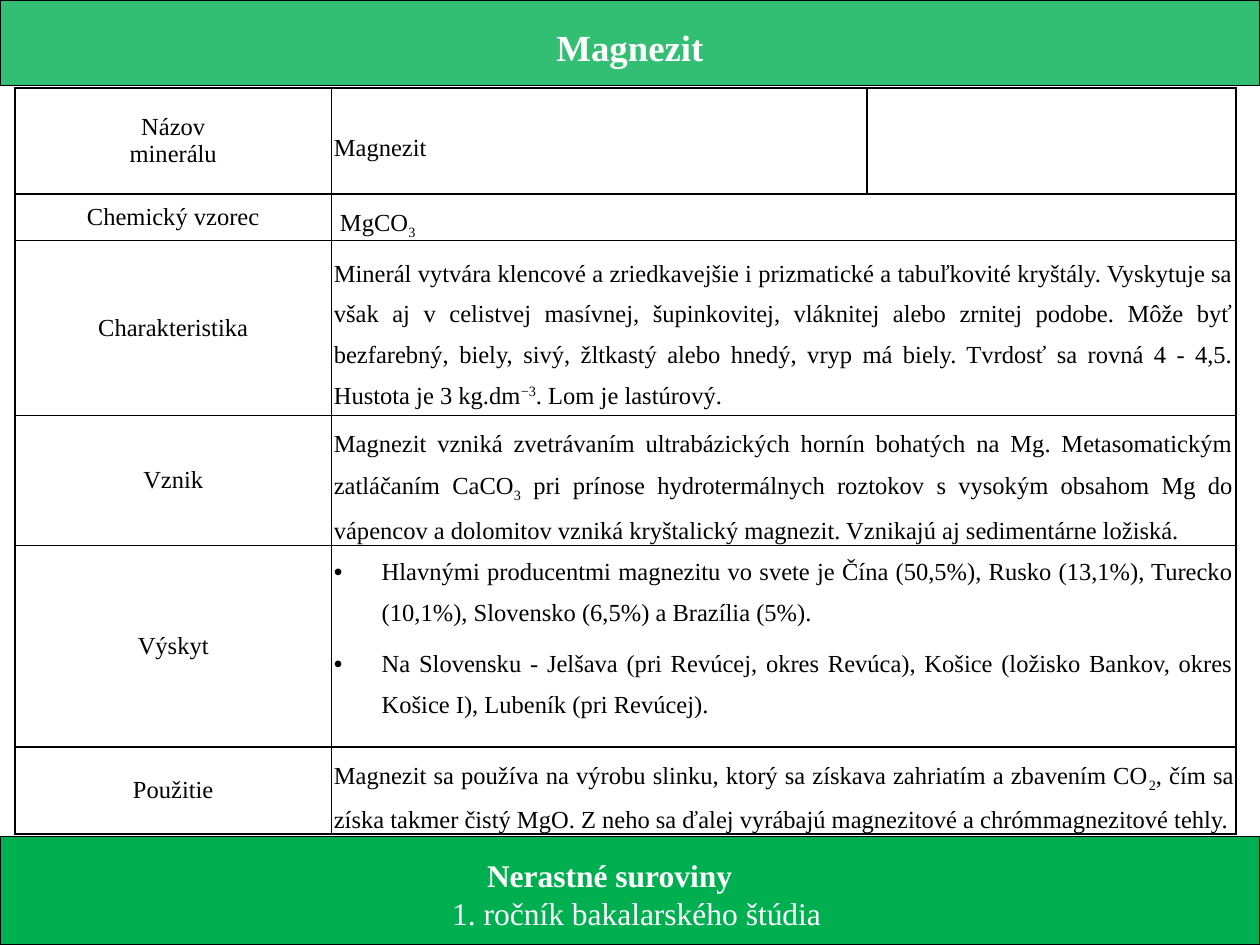
from lxml.etree import SubElement
from pptx import Presentation
from pptx.dml.color import RGBColor
from pptx.enum.shapes import MSO_SHAPE
from pptx.enum.text import MSO_ANCHOR, PP_ALIGN
from pptx.oxml.ns import qn
from pptx.util import Inches, Pt

GREEN = RGBColor(0x00, 0xB0, 0x50)
BLACK = RGBColor(0x00, 0x00, 0x00)
WHITE = RGBColor(0xFF, 0xFF, 0xFF)
FONT = "Times New Roman"

WIDTH, HEIGHT = 10, 7.5
COLUMN_WIDTHS = [2.51, 4.25, 2.93]
ROW_HEIGHTS = [0.84, 0.34, 1.39, 1.03, 1.6, 0.69]
SUBSCRIPT, SUPERSCRIPT = -25000, 30000

# Each row: label lines, then paragraphs made of (text, baseline) runs.
MINERAL_ROWS = [
    (["Názov", "minerálu"], [[("Magnezit", 0)]]),
    (["Chemický vzorec"], [[(" MgCO", 0), ("3", SUBSCRIPT)]]),
    (["Charakteristika"], [[
        ("Minerál vytvára klencové a zriedkavejšie i prizmatické a tabuľkovité kryštály. "
         "Vyskytuje sa však aj v celistvej masívnej, šupinkovitej, vláknitej alebo zrnitej "
         "podobe. Môže byť bezfarebný, biely, sivý, žltkastý alebo hnedý, vryp má biely. "
         "Tvrdosť sa rovná 4 - 4,5. Hustota je 3 kg.dm", 0),
        ("−3", SUPERSCRIPT), (". Lom je lastúrový.", 0)]]),
    (["Vznik"], [[
        ("Magnezit vzniká zvetrávaním ultrabázických hornín bohatých na Mg. "
         "Metasomatickým zatláčaním CaCO", 0),
        ("3", SUBSCRIPT),
        (" pri prínose hydrotermálnych roztokov s vysokým obsahom Mg do vápencov a dolomitov "
         "vzniká kryštalický magnezit. Vznikajú aj sedimentárne ložiská.", 0)]]),
    (["Výskyt"], [
        [("Hlavnými producentmi magnezitu vo svete je Čína (50,5%), Rusko (13,1%), "
          "Turecko (10,1%), Slovensko (6,5%) a Brazília (5%).", 0)],
        [("Na Slovensku - Jelšava (pri Revúcej, okres Revúca), Košice (ložisko Bankov, "
          "okres Košice I), Lubeník (pri Revúcej).", 0)]]),
    (["Použitie"], [[
        ("Magnezit sa používa na výrobu slinku, ktorý sa získava zahriatím a zbavením CO", 0),
        ("2", SUBSCRIPT),
        (", čím sa získa takmer čistý MgO. Z neho sa ďalej vyrábajú magnezitové "
         "a chrómmagnezitové tehly.", 0)]]),
]


def add_run(paragraph, text, size, color, bold=False, baseline=0):
    run = paragraph.add_run()
    run.text = text
    run.font.name = FONT
    run.font.size = Pt(size)
    run.font.color.rgb = color
    run.font.bold = bold
    if baseline:
        run.font._element.set("baseline", str(baseline))


def next_paragraph(text_frame, index):
    return text_frame.add_paragraph() if index else text_frame.paragraphs[0]


def add_band(slide, top, height, lines, top_margin, right_margin=0.1, opacity=100):
    """Draw a full-width green band; lines are (text, size, bold, left indent)."""
    band = slide.shapes.add_shape(
        MSO_SHAPE.RECTANGLE, 0, Inches(top), Inches(WIDTH), Inches(height))
    band.shadow.inherit = False
    band.fill.solid()
    band.fill.fore_color.rgb = GREEN
    if opacity < 100:
        color = band._element.spPr.find(qn("a:solidFill"))[0]
        SubElement(color, qn("a:alpha"), val=str(opacity * 1000))
    band.line.color.rgb = BLACK
    band.line.width = Pt(0.75)
    text_frame = band.text_frame
    text_frame.word_wrap = True
    text_frame.vertical_anchor = MSO_ANCHOR.MIDDLE
    text_frame.margin_top = Inches(top_margin)
    text_frame.margin_right = Inches(right_margin)
    for index, (text, size, bold, indent) in enumerate(lines):
        paragraph = next_paragraph(text_frame, index)
        paragraph.alignment = PP_ALIGN.CENTER
        if indent:
            paragraph._p.get_or_add_pPr().set("marL", str(Inches(indent)))
        add_run(paragraph, text, size, WHITE, bold)


def format_cell(cell):
    properties = cell._tc.get_or_add_tcPr()
    for side in ("lnL", "lnR", "lnT", "lnB"):
        border = SubElement(properties, qn(f"a:{side}"), w=str(Pt(1)))
        fill = SubElement(border, qn("a:solidFill"))
        SubElement(fill, qn("a:srgbClr"), val=str(BLACK))
    cell.fill.background()
    cell.margin_left = cell.margin_right = Inches(0.02)
    cell.margin_top = cell.margin_bottom = 0
    cell.vertical_anchor = MSO_ANCHOR.MIDDLE


def fill_label(cell, lines):
    for index, line in enumerate(lines):
        paragraph = next_paragraph(cell.text_frame, index)
        paragraph.alignment = PP_ALIGN.CENTER
        add_run(paragraph, line, 14, BLACK)


def fill_description(cell, paragraphs, alignment):
    """Write the paragraphs, as a bulleted list when there are several."""
    bulleted = len(paragraphs) > 1
    if bulleted:
        cell.vertical_anchor = MSO_ANCHOR.TOP
    for index, runs in enumerate(paragraphs):
        paragraph = next_paragraph(cell.text_frame, index)
        paragraph.alignment = alignment
        paragraph.line_spacing = 1.5
        paragraph.space_after = Pt(6)
        if bulleted:
            properties = paragraph._p.get_or_add_pPr()
            properties.set("marL", str(Inches(0.38)))
            properties.set("indent", str(Inches(-0.38)))
            SubElement(properties, qn("a:buFont"), typeface="Arial")
            SubElement(properties, qn("a:buChar"), char="•")
        for text, baseline in runs:
            add_run(paragraph, text, 14, BLACK, baseline=baseline)


def add_mineral_table(slide):
    table = slide.shapes.add_table(
        len(ROW_HEIGHTS), len(COLUMN_WIDTHS), Inches(0.12), Inches(0.7),
        Inches(sum(COLUMN_WIDTHS)), Inches(sum(ROW_HEIGHTS))).table
    table.first_row = table.horz_banding = False
    for column, width in zip(table.columns, COLUMN_WIDTHS):
        column.width = Inches(width)
    for row, height in zip(table.rows, ROW_HEIGHTS):
        row.height = Inches(height)
    for cell in table.iter_cells():
        format_cell(cell)
    for index, (label, description) in enumerate(MINERAL_ROWS):
        if index:
            table.cell(index, 1).merge(table.cell(index, 2))
        fill_label(table.cell(index, 0), label)
        alignment = PP_ALIGN.JUSTIFY if index > 1 else PP_ALIGN.LEFT
        fill_description(table.cell(index, 1), description, alignment)


def main():
    presentation = Presentation()
    presentation.slide_width = Inches(WIDTH)
    presentation.slide_height = Inches(HEIGHT)
    slide = presentation.slides.add_slide(presentation.slide_layouts[6])
    add_band(slide, 0, 0.68, [("Magnezit", 21, True, 0)], top_margin=0.11, opacity=80)
    add_band(slide, 6.64, 0.86,
             [("Nerastné suroviny", 18, True, 0),
              ("1. ročník bakalarského štúdia", 18, False, 0.43)],
             top_margin=0.1, right_margin=0.42)
    add_mineral_table(slide)
    presentation.save("out.pptx")


if __name__ == "__main__":
    main()
